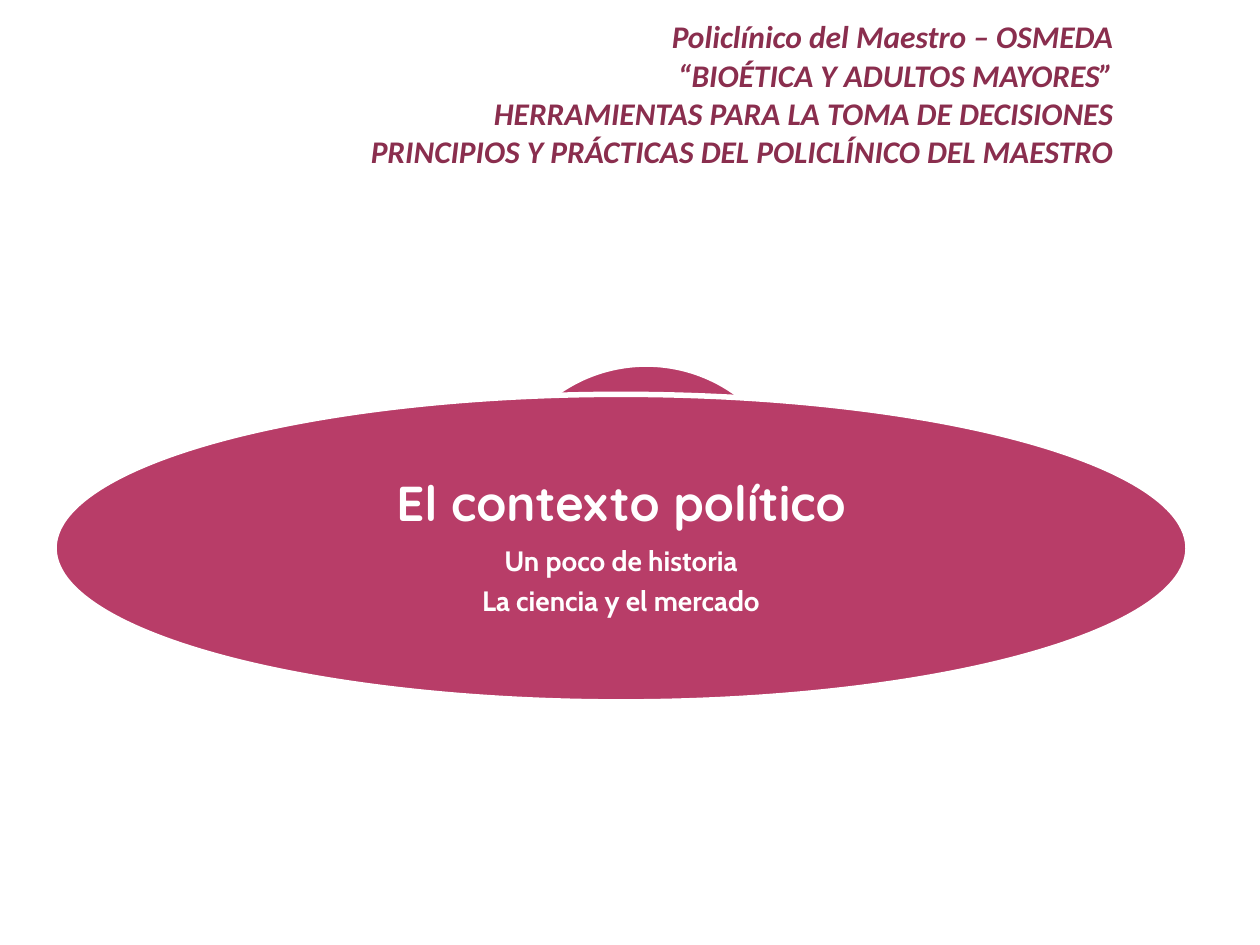
from dataclasses import dataclass

from pptx import Presentation
from pptx.dml.color import RGBColor
from pptx.enum.shapes import MSO_SHAPE
from pptx.enum.text import MSO_ANCHOR, MSO_AUTO_SIZE, PP_ALIGN
from pptx.util import Cm, Pt

ELLIPSE = MSO_SHAPE.OVAL
TOP, MIDDLE = MSO_ANCHOR.TOP, MSO_ANCHOR.MIDDLE
RIGHT, CENTER = PP_ALIGN.RIGHT, PP_ALIGN.CENTER
NO_AUTOFIT = MSO_AUTO_SIZE.NONE


@dataclass(frozen=True)
class Theme:
    rose: RGBColor = RGBColor(0xB8, 0x3D, 0x68)
    wine: RGBColor = RGBColor(0x8A, 0x2E, 0x4E)
    white: RGBColor = RGBColor(0xFF, 0xFF, 0xFF)
    header_size: Pt = Pt(18)
    topic_size: Pt = Pt(28)
    subtopic_size: Pt = Pt(16)
    outline: Pt = Pt(3.15)


theme = Theme()


def add_ellipse(left, top, width, height):
    ellipse = slide.shapes.add_shape(ELLIPSE, Cm(left), Cm(top), Cm(width), Cm(height))
    ellipse.shadow.inherit = False
    ellipse.fill.solid()
    ellipse.fill.fore_color.rgb = theme.rose
    ellipse.line.color.rgb = theme.white
    ellipse.line.width = theme.outline
    return ellipse


def style_paragraph(paragraph, font_name, size, color, align):
    paragraph.alignment = align
    paragraph.font.name = font_name
    paragraph.font.size = size
    paragraph.font.color.rgb = color
    paragraph.font.bold = True


prs = Presentation()
prs.slide_width, prs.slide_height = Cm(25.4), Cm(19.05)
slide = prs.slides.add_slide(prs.slide_layouts[5])

# Course header
header = slide.shapes.title
header.left, header.top, header.width, header.height = Cm(0), Cm(0), Cm(22.7), Cm(4.37)
header_text = header.text_frame
header_text.text = "\n".join([
    "Policlínico del Maestro – OSMEDA",
    "“BIOÉTICA Y ADULTOS MAYORES”",
    "HERRAMIENTAS PARA LA TOMA DE DECISIONES",
    "PRINCIPIOS Y PRÁCTICAS DEL POLICLÍNICO DEL MAESTRO",
])
header_text.word_wrap = True
header_text.auto_size = NO_AUTOFIT
header_text.vertical_anchor = TOP
header_text.margin_top = Cm(0.34)
for line in header_text.paragraphs:
    style_paragraph(line, "Calibri", theme.header_size, theme.wine, RIGHT)
    line.font.italic = True
header_text.paragraphs[0].space_after = Pt(1)

# Topic ellipse in front of the small circle
add_ellipse(9.93, 7.34, 6.2, 6.2)
topic = add_ellipse(1.09, 7.95, 22.86, 6.2)
topic_text = topic.text_frame
topic_text.text = "El contexto político\nUn poco de historia\nLa ciencia y el mercado"
topic_text.word_wrap = True
topic_text.vertical_anchor = MIDDLE
heading, *subtopics = topic_text.paragraphs
style_paragraph(heading, "Quicksand", theme.topic_size, theme.white, CENTER)
heading.space_after = Pt(9)
for subtopic in subtopics:
    style_paragraph(subtopic, "Cabin", theme.subtopic_size, theme.white, CENTER)
    subtopic.space_after = Pt(5.5)
for paragraph in topic_text.paragraphs:
    paragraph.line_spacing = 0.9

prs.save("out.pptx")
